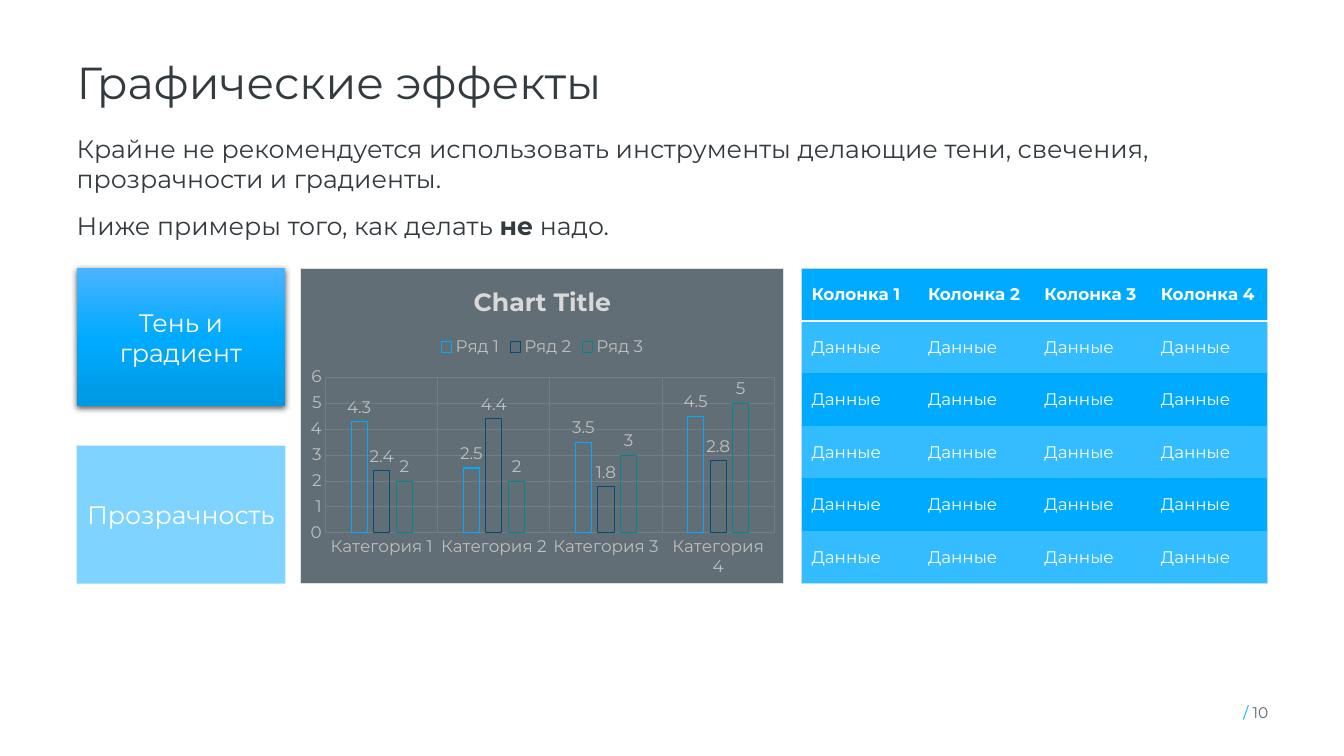
from lxml import etree
from pptx import Presentation
from pptx.chart.data import CategoryChartData
from pptx.dml.color import RGBColor
from pptx.enum.chart import XL_CHART_TYPE, XL_LABEL_POSITION, XL_LEGEND_POSITION, XL_TICK_MARK
from pptx.enum.shapes import MSO_SHAPE
from pptx.enum.text import MSO_ANCHOR, MSO_AUTO_SIZE, PP_ALIGN
from pptx.oxml import parse_xml
from pptx.oxml.ns import nsdecls, qn
from pptx.util import Inches, Pt

COLUMN = XL_CHART_TYPE.COLUMN_CLUSTERED
OUTSIDE = XL_LABEL_POSITION.OUTSIDE_END
LEGEND_TOP = XL_LEGEND_POSITION.TOP
NO_TICK = XL_TICK_MARK.NONE
RECT = MSO_SHAPE.RECTANGLE
TOP, MIDDLE = MSO_ANCHOR.TOP, MSO_ANCHOR.MIDDLE
NO_FIT = MSO_AUTO_SIZE.NONE
LEFT, CENTER, RIGHT = PP_ALIGN.LEFT, PP_ALIGN.CENTER, PP_ALIGN.RIGHT

FONT = "Montserrat"
COLORS = {
    "text": "343B3F", "muted": "5D686E", "blue": "00ABFF", "light": "33BCFF",
    "white": "FFFFFF", "panel": "616E75", "grid": "727E84", "label": "BFBFBF",
    "title": "D9D9D9", "frame": "DFE2E4", "navy": "004D7A", "teal": "008793",
    "edge": "BDDAFF", "grad_top": "4BB3FF", "grad_end": "0098E3", "shadow": "000000",
}
NO_STYLE = "{2D5ABB26-0587-4C30-8999-92F81FD0307C}"
MARGIN, WIDTH, GRID_TOP = 0.76, 11.81, 2.66


def rgb(name):
    return RGBColor.from_string(COLORS[name])


def set_font(font, size, color, bold=False):
    font.name, font.size, font.bold = FONT, Pt(size), bold
    font.color.rgb = rgb(color)


def add_text(p, text, size=18, color="text", bold=False, align=LEFT):
    p.alignment = align
    r = p.add_run()
    r.text = text
    set_font(r.font, size, color, bold)


class SlideBuilder:
    def __init__(self, prs):
        self.slide = prs.slides.add_slide(prs.slide_layouts[1])
        self.shapes = self.slide.shapes

    def frame(self, sp, box, anchor=TOP):
        sp.left, sp.top, sp.width, sp.height = map(Inches, box)
        tf = sp.text_frame
        tf.word_wrap, tf.auto_size, tf.vertical_anchor = True, NO_FIT, anchor
        tf.margin_left = tf.margin_right = tf.margin_top = tf.margin_bottom = 0
        return tf

    def title(self, text, box):
        p = self.frame(self.shapes.title, box).paragraphs[0]
        p.line_spacing = 0.9
        add_text(p, text, size=32)

    def body(self, paragraphs, box):
        tf = self.frame(self.slide.placeholders[1], box)
        for i, runs in enumerate(paragraphs):
            p = tf.add_paragraph() if i else tf.paragraphs[0]
            pPr = p._p.get_or_add_pPr()
            pPr.set("marL", "0")
            pPr.set("indent", "0")
            etree.SubElement(pPr, qn("a:buNone"))
            p.space_before, p.space_after = Pt(0), Pt(12)
            for text, bold in runs:
                add_text(p, text, bold=bold)

    def page_number(self, number, box):
        p = self.frame(self.shapes.add_textbox(0, 0, 0, 0), box, MIDDLE).paragraphs[0]
        add_text(p, "/ ", size=11, color="blue", align=RIGHT)
        add_text(p, number, size=11, color="muted", align=RIGHT)

    def card(self, text, box):
        sp = self.shapes.add_shape(RECT, *map(Inches, box))
        sp.shadow.inherit = False
        sp.fill.solid()
        sp.fill.fore_color.rgb = rgb("blue")
        sp.line.fill.background()
        tf = sp.text_frame
        tf.word_wrap, tf.vertical_anchor = True, MIDDLE
        add_text(tf.paragraphs[0], text, color="white", align=CENTER)
        return sp

    def gradient_card(self, text, box):
        spPr = self.card(text, box)._element.spPr
        stops = "".join(
            f'<a:gs pos="{pos}"><a:srgbClr val="{COLORS[name]}"/></a:gs>'
            for pos, name in ((0, "grad_top"), (50000, "blue"), (100000, "grad_end")))
        spPr.replace(spPr.find(qn("a:solidFill")), parse_xml(
            f'<a:gradFill {nsdecls("a")}><a:gsLst>{stops}</a:gsLst>'
            '<a:lin ang="5400000" scaled="0"/></a:gradFill>'))
        spPr.find(qn("a:effectLst")).append(parse_xml(
            f'<a:outerShdw {nsdecls("a")} blurRad="{Pt(4.5)}" dist="{Pt(1.5)}" dir="5400000"'
            f' rotWithShape="0"><a:srgbClr val="{COLORS["shadow"]}">'
            '<a:alpha val="63000"/></a:srgbClr></a:outerShdw>'))

    def transparent_card(self, text, box):
        spPr = self.card(text, box)._element.spPr
        etree.SubElement(spPr.find(qn("a:solidFill"))[0], qn("a:alpha"), val="50000")

    def chart(self, title, categories, series, box):
        data = CategoryChartData()
        data.categories = categories
        for name, values, _ in series:
            data.add_series(name, values)
        chart = self.shapes.add_chart(COLUMN, *map(Inches, box), data).chart
        set_font(chart.font, 10, "text")
        chart.has_title = True
        add_text(chart.chart_title.text_frame.paragraphs[0], title,
                 color="title", bold=True, align=CENTER)
        chart.has_legend = True
        chart.legend.position, chart.legend.include_in_layout = LEGEND_TOP, False
        set_font(chart.legend.font, 12, "label")
        for axis in (chart.category_axis, chart.value_axis):
            axis.major_tick_mark = axis.minor_tick_mark = NO_TICK
            axis.format.line.fill.background()
            axis.has_major_gridlines = True
            line = axis.major_gridlines.format.line
            line.color.rgb, line.width = rgb("grid"), Pt(0.75)
            set_font(axis.tick_labels.font, 12, "label")
        chart.value_axis.minimum_scale, chart.value_axis.maximum_scale = 0, 6
        chart.value_axis.major_unit = 1
        plot = chart.plots[0]
        plot.gap_width, plot.overlap, plot.vary_by_categories = 315, -40, False
        for ser, (_, _, color) in zip(plot.series, series):
            ser.format.fill.background()
            ser.format.line.color.rgb, ser.format.line.width = rgb(color), Pt(0.75)
            labels = ser.data_labels
            labels.show_value, labels.position = True, OUTSIDE
            set_font(labels.font, 12, "label")
        chart._chartSpace.find(qn("c:chart")).addnext(parse_xml(
            f'<c:spPr {nsdecls("c", "a")}><a:solidFill><a:srgbClr val="{COLORS["panel"]}"/>'
            f'</a:solidFill><a:ln w="{Pt(0.75)}"><a:solidFill>'
            f'<a:srgbClr val="{COLORS["frame"]}"/></a:solidFill></a:ln></c:spPr>'))

    def border(self, cell, side, color, width):
        cell._tc.get_or_add_tcPr().append(parse_xml(
            f'<a:ln{side} {nsdecls("a")} w="{Pt(width)}"><a:solidFill>'
            f'<a:srgbClr val="{COLORS[color]}"/></a:solidFill></a:ln{side}>'))

    def table(self, rows, box):
        n_rows, n_cols = len(rows), len(rows[0])
        table = self.shapes.add_table(n_rows, n_cols, *map(Inches, box)).table
        table._tbl.tblPr.find(qn("a:tableStyleId")).text = NO_STYLE
        for i, row in enumerate(rows):
            for j, text in enumerate(row):
                cell = table.cell(i, j)
                outer = {"L": j == 0, "R": j == n_cols - 1, "T": i == 0, "B": i == n_rows - 1}
                for side, on_edge in outer.items():
                    if on_edge:
                        self.border(cell, side, "edge", 0.5)
                if i == 0:
                    self.border(cell, "B", "white", 1.5)
                cell.fill.solid()
                cell.fill.fore_color.rgb = rgb("light" if i % 2 else "blue")
                cell.vertical_anchor = MIDDLE
                add_text(cell.text_frame.paragraphs[0], text, size=12, color="white", bold=i == 0)


def main():
    prs = Presentation()
    prs.slide_width, prs.slide_height = Inches(13.33), Inches(7.5)
    s = SlideBuilder(prs)
    s.title("Графические эффекты", (MARGIN, 0.6, WIDTH, 1))
    s.page_number("10", (11.87, 6.94, 0.71, 0.25))
    s.body([
        [("Крайне не рекомендуется использовать инструменты делающие тени, свечения, "
          "прозрачности и градиенты.", False)],
        [("Ниже примеры того, как делать ", False), ("не", True), (" надо.", False)],
    ], (MARGIN, 1.32, WIDTH, 1.37))
    s.gradient_card("Тень и градиент", (MARGIN, GRID_TOP, 2.07, 1.37))
    s.chart("Chart Title", [f"Категория {n}" for n in range(1, 5)], [
        ("Ряд 1", (4.3, 2.5, 3.5, 4.5), "blue"),
        ("Ряд 2", (2.4, 4.4, 1.8, 2.8), "navy"),
        ("Ряд 3", (2, 2, 3, 5), "teal"),
    ], (2.98, GRID_TOP, 4.8, 3.13))
    header = [f"Колонка {n}" for n in range(1, 5)]
    s.table([header] + [["Данные"] * 4] * 5, (7.95, GRID_TOP, 4.62, 3.13))
    s.transparent_card("Прозрачность", (MARGIN, 4.42, 2.07, 1.37))
    prs.save("out.pptx")


if __name__ == "__main__":
    main()
